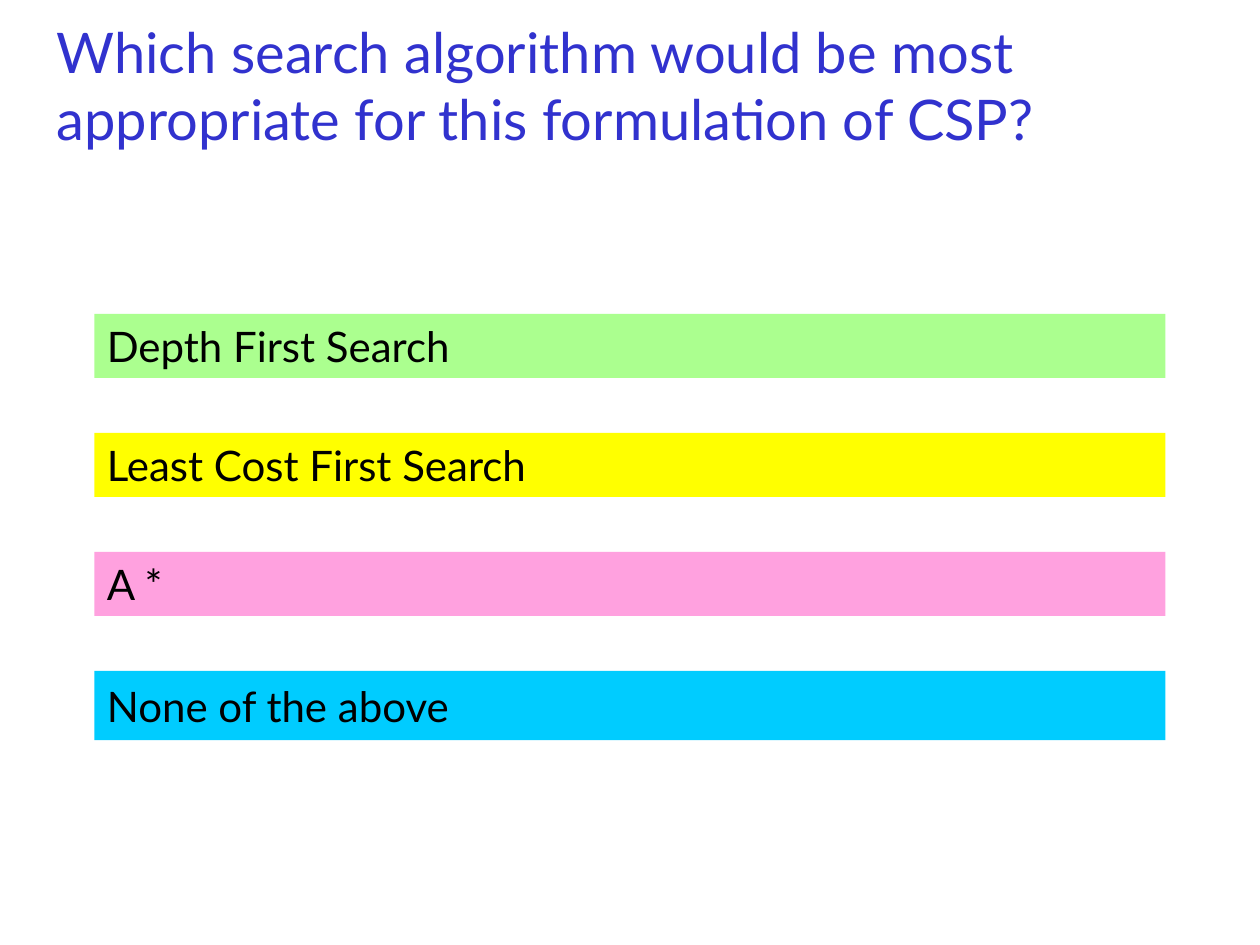
from dataclasses import dataclass

from lxml import etree
from pptx import Presentation
from pptx.dml.color import RGBColor
from pptx.enum import shapes, text
from pptx.oxml import ns
from pptx.util import Pt


@dataclass(frozen=True)
class Theme:
    font: str = "Lato"
    title_size: int = 32
    answer_size: int = 24
    title: str = "3132CE"
    ink: str = "000000"
    green: str = "66FF33"
    yellow: str = "FFFF00"
    pink: str = "FF66CC"
    blue: str = "00CCFF"


THEME = Theme()
ANSWERS = [
    ("Depth First Search", THEME.green, 55, 36.7),
    ("Least Cost First Search", THEME.yellow, 100, 36.7),
    ("A *", THEME.pink, 61, 36.7),
    ("None of the above", THEME.blue, 100, 39.6),
]
ANSWER_LEFT, ANSWER_TOP, ANSWER_WIDTH, ANSWER_PITCH = 54, 179.3, 612, 68


def write(tf, words, size, color):
    tf.word_wrap = True
    tf.vertical_anchor = text.MSO_ANCHOR.MIDDLE
    tf.text = words
    p = tf.paragraphs[0]
    p.alignment = text.PP_ALIGN.LEFT
    r = p.runs[0]
    r.font.name = THEME.font
    r.font.size = Pt(size)
    r.font.color.rgb = RGBColor.from_string(color)


def add_title(s, words):
    sp = s.shapes.add_textbox(Pt(25.2), Pt(15.1), Pt(678.2), Pt(66.2))
    write(sp.text_frame, words, THEME.title_size, THEME.title)


def set_opacity(sp, percent):
    clr = sp.fill._xPr.find(".//" + ns.qn("a:srgbClr"))
    etree.SubElement(clr, ns.qn("a:alpha")).set("val", str(percent * 1000))


def add_answer(s, top, words, color, opacity, height):
    sp = s.shapes.add_shape(
        shapes.MSO_SHAPE.RECTANGLE,
        Pt(ANSWER_LEFT), Pt(top), Pt(ANSWER_WIDTH), Pt(height),
    )
    sp.shadow.inherit = False
    sp.line.fill.background()
    sp.fill.solid()
    sp.fill.fore_color.rgb = RGBColor.from_string(color)
    if opacity < 100:
        set_opacity(sp, opacity)
    write(sp.text_frame, words, THEME.answer_size, THEME.ink)


def main():
    prs = Presentation()
    prs.slide_width, prs.slide_height = Pt(720), Pt(540)
    s = prs.slides.add_slide(prs.slide_layouts[6])
    add_title(s, "Which search algorithm would be most appropriate for this formulation of CSP?")
    for i, answer in enumerate(ANSWERS):
        add_answer(s, ANSWER_TOP + i * ANSWER_PITCH, *answer)
    prs.save("out.pptx")


if __name__ == "__main__":
    main()
